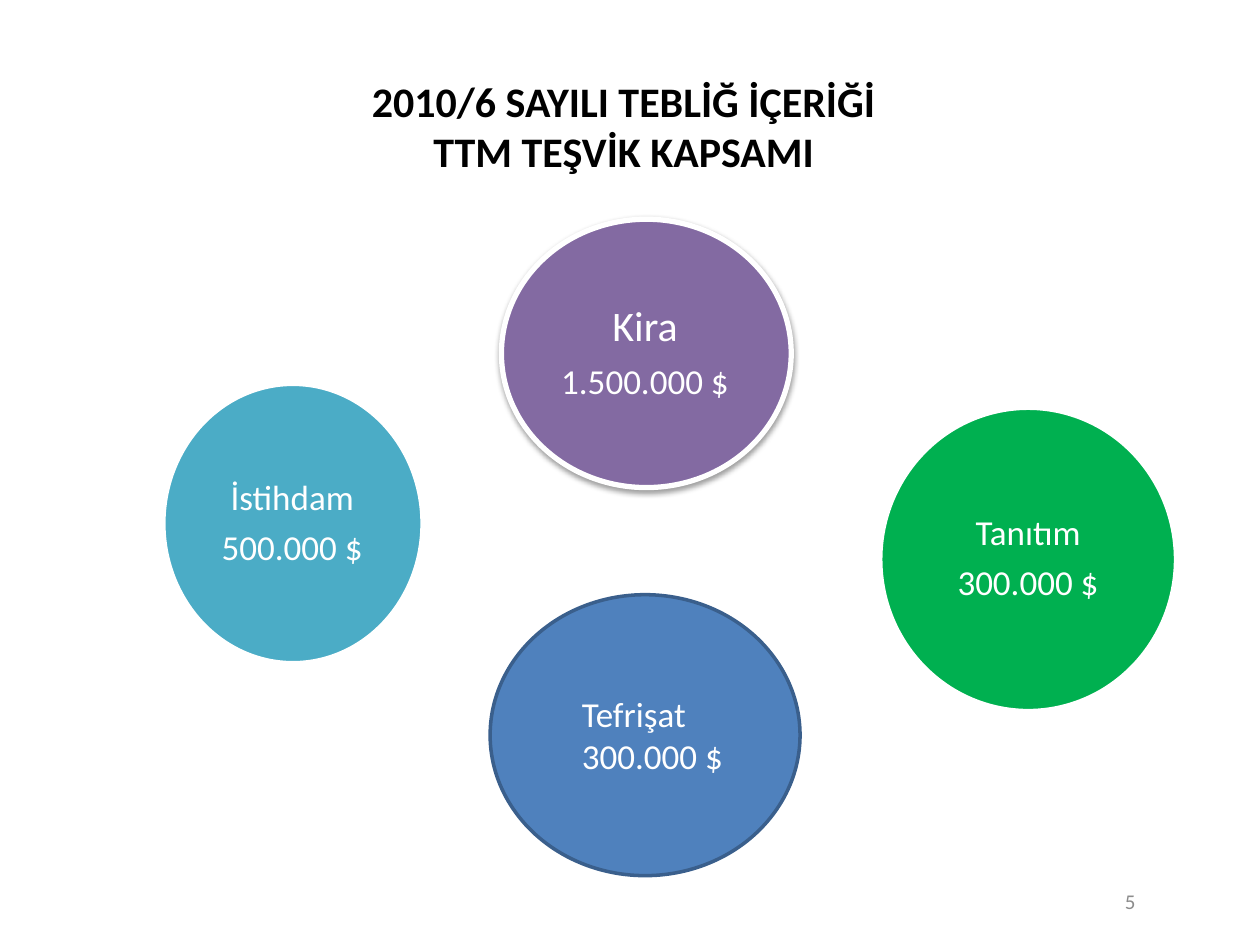
from lxml import etree
from pptx import Presentation
from pptx.dml.color import RGBColor
from pptx.enum.shapes import MSO_SHAPE
from pptx.enum.text import MSO_ANCHOR, PP_ALIGN
from pptx.oxml.ns import qn
from pptx.util import Inches, Pt

OVAL = MSO_SHAPE.OVAL
LEFT, CENTER, RIGHT = PP_ALIGN.LEFT, PP_ALIGN.CENTER, PP_ALIGN.RIGHT
TOP, MIDDLE = MSO_ANCHOR.TOP, MSO_ANCHOR.MIDDLE

FONT = "Calibri"
BLACK = RGBColor(0x00, 0x00, 0x00)
WHITE = RGBColor(0xFF, 0xFF, 0xFF)
GRAY = RGBColor(0x8C, 0x8C, 0x8C)
PURPLE = RGBColor(0x80, 0x64, 0xA2)
TEAL = RGBColor(0x4B, 0xAC, 0xC6)
GREEN = RGBColor(0x00, 0xB0, 0x50)
BLUE = RGBColor(0x4F, 0x81, 0xBD)
DARK_BLUE = RGBColor(0x3A, 0x5F, 0x8C)

# Content: places are left, top, width, height in inches
TITLE = ["2010/6 SAYILI TEBLİĞ İÇERİĞİ", "TTM TEŞVİK KAPSAMI"]
PAGE_NUMBER = "5"
SPACED = dict(align=CENTER, anchor=MIDDLE, line_spacing=0.9, space_share=0.35)
SUPPORTS = [
    dict(lines=["Kira", "1.500.000 $"], sizes=[24, 20],
         circle=(3.98, 1.74, 2.3, 2.13), fill=PURPLE, line=WHITE, weight=3,
         label=(4.31, 2.05, 1.62, 1.51), style=dict(SPACED, inset=0.03),
         raised=True),
    dict(lines=["İstihdam", "500.000 $"], sizes=[20, 20],
         circle=(1.3, 3.05, 2.05, 2.21), fill=TEAL, line=WHITE, weight=2,
         label=(1.48, 3.6, 1.68, 1.12), style=dict(SPACED, inset=0.16)),
    dict(lines=["Tanıtım", "300.000 $"], sizes=[20, 20],
         circle=(6.99, 3.24, 2.34, 2.4), fill=GREEN, line=WHITE, weight=2,
         label=(7.2, 3.84, 1.92, 1.2), style=dict(SPACED, inset=0.16)),
    dict(lines=["Tefrişat", "300.000 $"], sizes=[20, 20],
         circle=(3.89, 4.72, 2.46, 2.23), fill=BLUE, line=DARK_BLUE, weight=2,
         label=(4.52, 5.45, 1.44, 0.77), style={}),
]


def add_text(page, place, lines, sizes, color, align=LEFT, anchor=TOP,
             inset=None, line_spacing=None, space_share=0, bold=False):
    box = page.shapes.add_textbox(*map(Inches, place))
    frame = box.text_frame
    frame.word_wrap = True
    frame.vertical_anchor = anchor
    if inset is not None:
        frame.margin_left = frame.margin_right = Inches(inset)
        frame.margin_top = frame.margin_bottom = Inches(inset)
    frame.text = "\n".join(lines)
    for para, size in zip(frame.paragraphs, sizes):
        para.alignment = align
        if line_spacing:
            para.line_spacing = line_spacing
        if space_share:
            para.space_after = Pt(round(size * space_share))
        for span in para.runs:
            span.font.name = FONT
            span.font.size = Pt(size)
            span.font.bold = bold
            span.font.color.rgb = color


def raise_circle(circle):
    """Make the fill slightly transparent and add a soft shadow below."""
    properties = circle._element.spPr
    fill_color = properties.find(qn("a:solidFill")).find(qn("a:srgbClr"))
    etree.SubElement(fill_color, qn("a:alpha"), val="90000")
    effects = properties.find(qn("a:effectLst"))
    shadow = etree.SubElement(
        effects, qn("a:outerShdw"), blurRad=str(Pt(3.1)), dist=str(Pt(1.6)),
        dir="5400000", rotWithShape="0")
    shadow_color = etree.SubElement(shadow, qn("a:srgbClr"), val=str(BLACK))
    etree.SubElement(shadow_color, qn("a:alpha"), val="38000")


def add_support(page, support):
    circle = page.shapes.add_shape(OVAL, *map(Inches, support["circle"]))
    circle.shadow.inherit = False
    circle.fill.solid()
    circle.fill.fore_color.rgb = support["fill"]
    circle.line.color.rgb = support["line"]
    circle.line.width = Pt(support["weight"])
    if support.get("raised"):
        raise_circle(circle)
    add_text(page, support["label"], support["lines"], support["sizes"],
             WHITE, **support["style"])


def main():
    deck = Presentation()
    deck.slide_width, deck.slide_height = Inches(10), Inches(7.5)
    page = deck.slides.add_slide(deck.slide_layouts[6])

    # Page number and title
    add_text(page, (7.01, 6.95, 2.1, 0.4), [PAGE_NUMBER], [12], GRAY,
             align=RIGHT, anchor=MIDDLE)
    add_text(page, (1.11, 0.55, 7.68, 0.91), TITLE, [24, 24], BLACK,
             align=CENTER, bold=True)

    # Support circles with their labels
    for support in SUPPORTS:
        add_support(page, support)

    deck.save("out.pptx")


if __name__ == "__main__":
    main()
